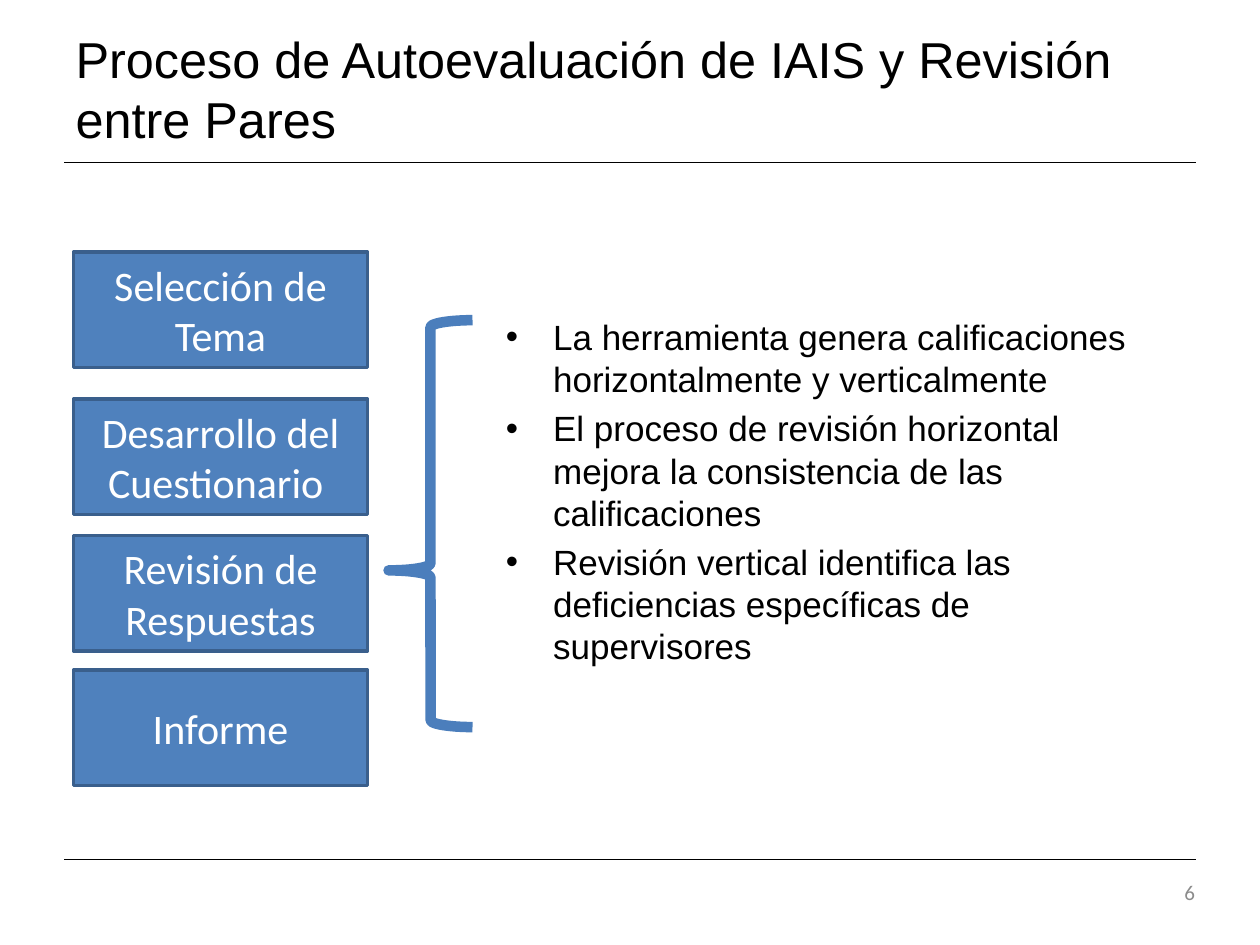
from lxml import etree
from pptx import Presentation
from pptx.dml.color import RGBColor
from pptx.enum.shapes import MSO_CONNECTOR, MSO_SHAPE
from pptx.enum.text import MSO_ANCHOR, MSO_AUTO_SIZE, PP_ALIGN
from pptx.oxml.ns import qn
from pptx.util import Pt

STRAIGHT = MSO_CONNECTOR.STRAIGHT
RECTANGLE, LEFT_BRACE = MSO_SHAPE.RECTANGLE, MSO_SHAPE.LEFT_BRACE
TOP, MIDDLE, BOTTOM = MSO_ANCHOR.TOP, MSO_ANCHOR.MIDDLE, MSO_ANCHOR.BOTTOM
LEFT, CENTER, RIGHT = PP_ALIGN.LEFT, PP_ALIGN.CENTER, PP_ALIGN.RIGHT
NO_AUTOFIT = MSO_AUTO_SIZE.NONE

BLACK = RGBColor(0x00, 0x00, 0x00)
WHITE = RGBColor(0xFF, 0xFF, 0xFF)
GRAY = RGBColor(0x8C, 0x8C, 0x8C)
STEP_FILL = RGBColor(0x4F, 0x81, 0xBD)
STEP_BORDER = RGBColor(0x3A, 0x5F, 0x8C)
BRACE_BLUE = RGBColor(0x4B, 0x7E, 0xBC)

TITLE = "Proceso de Autoevaluación de IAIS y Revisión entre Pares"
STEPS = [
    (0, "Selección de Tema"),
    (84, "Desarrollo del Cuestionario "),
    (162, "Revisión de Respuestas"),
    (239, "Informe"),
]
FINDINGS = [
    "La herramienta genera calificaciones horizontalmente y verticalmente",
    "El proceso de revisión horizontal mejora la consistencia de las calificaciones",
    "Revisión vertical identifica las deficiencias específicas de supervisores",
]


def points(*lengths):
    return [Pt(length) for length in lengths]


def format_frame(shape, anchor):
    frame = shape.text_frame
    frame.word_wrap = True
    frame.auto_size = NO_AUTOFIT
    frame.vertical_anchor = anchor
    frame.margin_left = frame.margin_right = Pt(7.2)
    frame.margin_top = frame.margin_bottom = Pt(3.6)
    return frame


def format_paragraph(paragraph, font_name, size, color, alignment):
    paragraph.alignment = alignment
    for run in paragraph.runs:
        run.font.name = font_name
        run.font.size = Pt(size)
        run.font.color.rgb = color


def add_title(slide, left, top, width, height):
    title = slide.shapes.title
    title.left, title.top, title.width, title.height = points(left, top, width, height)
    frame = format_frame(title, BOTTOM)
    frame.text = TITLE
    paragraph = frame.paragraphs[0]
    paragraph.line_spacing = Pt(34.3)
    format_paragraph(paragraph, "Arial", 28.8, BLACK, LEFT)


def add_rule(slide, left, top, width):
    rule = slide.shapes.add_connector(STRAIGHT, *points(left, top, left + width, top))
    rule.line.color.rgb = BLACK
    rule.line.width = Pt(0.75)
    etree.SubElement(rule._element.spPr, qn("a:effectLst"))


def add_steps(slide, left, top, width, height):
    """Stack the process steps; height is that of one step."""
    for offset, label in STEPS:
        step = slide.shapes.add_shape(RECTANGLE, *points(left, top + offset, width, height))
        step.shadow.inherit = False
        step.fill.solid()
        step.fill.fore_color.rgb = STEP_FILL
        step.line.color.rgb = STEP_BORDER
        step.line.width = Pt(2)
        frame = format_frame(step, MIDDLE)
        frame.text = label
        format_paragraph(frame.paragraphs[0], "Calibri", 24, WHITE, CENTER)


def add_brace(slide, left, top, width, height):
    brace = slide.shapes.add_shape(LEFT_BRACE, *points(left, top, width, height))
    brace.shadow.inherit = False
    brace.adjustments[0] = 0.083
    brace.adjustments[1] = 0.615
    brace.fill.background()
    brace.line.color.rgb = BRACE_BLUE
    brace.line.width = Pt(6)


def add_bullet(paragraph, indent):
    properties = paragraph._p.get_or_add_pPr()
    properties.set("marL", str(Pt(indent)))
    properties.set("indent", str(-Pt(indent)))
    etree.SubElement(properties, qn("a:buFont")).set("typeface", "Arial")
    etree.SubElement(properties, qn("a:buChar")).set("char", "•")


def add_findings(slide, left, top, width, height):
    box = slide.shapes.add_textbox(*points(left, top, width, height))
    frame = format_frame(box, TOP)
    frame.text = "\n".join(FINDINGS)
    for index, paragraph in enumerate(frame.paragraphs):
        add_bullet(paragraph, 27)
        paragraph.line_spacing = Pt(24)
        if index:
            paragraph.space_before = Pt(4)
        format_paragraph(paragraph, "Arial", 20, BLACK, LEFT)


def add_slide_number(slide, left, top, width, height):
    box = slide.shapes.add_textbox(*points(left, top, width, height))
    frame = format_frame(box, MIDDLE)
    frame.text = "6"
    format_paragraph(frame.paragraphs[0], "Calibri", 12, GRAY, RIGHT)


def main():
    presentation = Presentation()
    presentation.slide_width, presentation.slide_height = points(720, 540)
    slide = presentation.slides.add_slide(presentation.slide_layouts[5])
    for rule_top in (93, 491):
        add_rule(slide, 36.7, rule_top, 646.6)
    add_title(slide, 36, 21.6, 648, 67)
    add_slide_number(slide, 648, 492, 42, 36)
    add_findings(slide, 282, 177, 396, 279)
    add_steps(slide, 42, 144, 168, 66)
    add_brace(slide, 222, 183, 48, 232.5)
    presentation.save("out.pptx")


if __name__ == "__main__":
    main()
